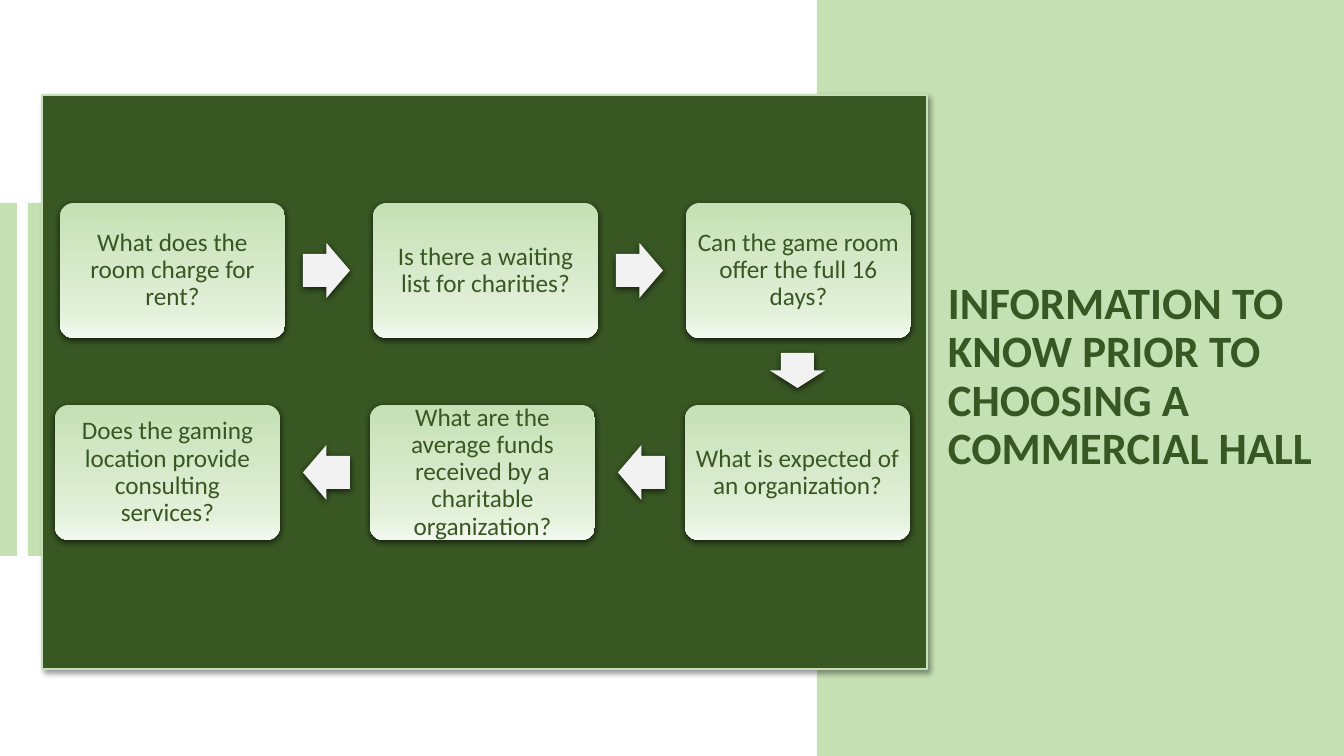
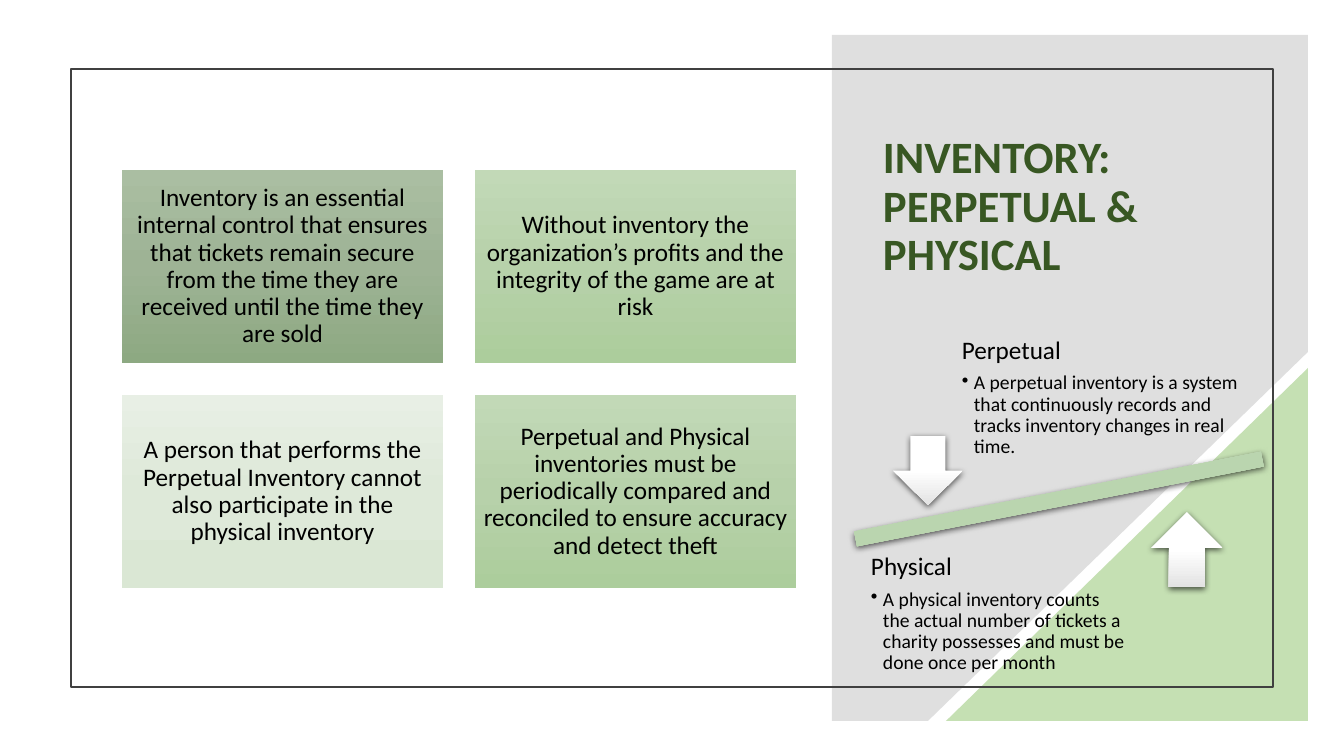
import pptx
import pptx.dml.color
import pptx.enum.shapes
import pptx.enum.text
import pptx.oxml.ns
import pptx.util
from lxml import etree

SHAPE = pptx.enum.shapes.MSO_SHAPE
ALIGN = pptx.enum.text.PP_ALIGN
ANCHOR = pptx.enum.text.MSO_ANCHOR
qn = pptx.oxml.ns.qn

PX = 914400 / 100.8
WIDTH, HEIGHT = 1344, 756

# Shared look
FONT = "Calibri"
DARK, LIGHT, BLACK = "385723", "C5E0B3", "000000"
SOFT_SHADOW = (63, 4.5, 1.5, 90)  # opacity %, blur pt, distance pt, direction
PANEL_SHADOW = (40, 4, 3, 45)
CARD_FILL = [(0, "C5E0B4"), (81, "E2F0D9"), (100, "F3F9F0")]
SAGE = [(0, "AABEA2"), (50, "9EB395"), (100, "8DA982")]
GREEN = [(0, "C2D9B7"), (50, "B7D1AA"), (100, "ACCD9C")]
PALE = [(0, "E8EFE5"), (50, "DEE9D9"), (100, "DAE7D4")]
BEAM = [(0, "C4D9BB"), (50, "BAD5AF"), (100, "A5BF99")]
WHITE = [(0, "FFFFFF"), (50, "FFFFFF"), (100, "E3E3E3")]

# Slide 1: questions in reading order of the arrows
HALL_TITLE = "INFORMATION TO KNOW PRIOR TO CHOOSING A COMMERCIAL HALL"
CARD_W, CARD_H = 225, 135
QUESTION_ROWS = [
    dict(x=60, step=313, y=203, arrow=SHAPE.RIGHT_ARROW, arrow_dx=243, cards=[
        "What does the room charge for rent?",
        "Is there a waiting list for charities?",
        "Can the game room offer the full 16 days?"]),
    dict(x=685, step=-315, y=405, arrow=SHAPE.LEFT_ARROW, arrow_dx=-67, cards=[
        "What is expected of an organization?",
        "What are the average funds received by a charitable organization?",
        "Does the gaming location provide consulting services?"]),
]

# Slide 2: tiles, then the two sides of the seesaw
INVENTORY_TITLE = "INVENTORY: PERPETUAL & PHYSICAL"
TILE_W, TILE_H, TILE_GAP = 321, 193, 32
TILES = [
    ("Inventory is an essential internal control that ensures that tickets "
     "remain secure from the time they are received until the time they are sold", SAGE),
    ("Without inventory the organization’s profits and the integrity of the "
     "game are at risk", GREEN),
    ("A person that performs the Perpetual Inventory cannot also participate "
     "in the physical inventory", PALE),
    ("Perpetual and Physical inventories must be periodically compared and "
     "reconciled to ensure accuracy and detect theft", GREEN),
]
SIDES = [
    ("Perpetual", "A perpetual inventory is a system that continuously records "
     "and tracks inventory changes in real time.",
     (948, 333, 315, 129), SHAPE.DOWN_ARROW, (893, 436, 70, 69)),
    ("Physical", "A physical inventory counts the actual number of tickets a "
     "charity possesses and must be done once per month",
     (857, 539, 283, 150), SHAPE.UP_ARROW, (1151, 512, 72, 75)),
]


def px(n):
    return round(n * PX)


def rgb(value):
    return pptx.dml.color.RGBColor.from_string(value)


def paint(s, fill=None, line=None, line_pt=1, shadow=None, alpha=None):
    """Fill is a hex string, a list of gradient stops, or None."""
    if isinstance(fill, list):
        s.fill.gradient()
        s.fill.gradient_angle = 270
        stops = s.element.spPr.find(".//" + qn("a:gsLst"))
        for old in list(stops):
            stops.remove(old)
        for pos, value in fill:
            gs = etree.SubElement(stops, qn("a:gs"), pos=str(pos * 1000))
            etree.SubElement(gs, qn("a:srgbClr"), val=value)
    elif fill:
        s.fill.solid()
        s.fill.fore_color.rgb = rgb(fill)
        if alpha:
            clr = s.element.spPr.find(".//" + qn("a:srgbClr"))
            etree.SubElement(clr, qn("a:alpha"), val=str(alpha * 1000))
    else:
        s.fill.background()
    if line:
        s.line.color.rgb = rgb(line)
        s.line.width = pptx.util.Pt(line_pt)
    else:
        s.line.fill.background()
    s.shadow.inherit = False
    if shadow:
        opacity, blur, dist, angle = shadow
        effects = s.element.spPr.find(qn("a:effectLst"))
        outer = etree.SubElement(
            effects, qn("a:outerShdw"), blurRad=str(round(blur * 12700)),
            dist=str(round(dist * 12700)), dir=str(angle * 60000),
            algn="ctr", rotWithShape="0")
        clr = etree.SubElement(outer, qn("a:srgbClr"), val=BLACK)
        etree.SubElement(clr, qn("a:alpha"), val=str(opacity * 1000))


def add_shape(slide, kind, box, adj=(), **look):
    s = slide.shapes.add_shape(kind, *map(px, box))
    for i, value in enumerate(adj):
        s.adjustments[i] = value
    paint(s, **look)
    return s


def set_frame(s, inset_x, inset_y):
    tf = s.text_frame
    tf.word_wrap = True
    tf.vertical_anchor = ANCHOR.MIDDLE
    tf.margin_left = tf.margin_right = px(inset_x)
    tf.margin_top = tf.margin_bottom = px(inset_y)
    return tf


def write(p, text, size=18, color=BLACK, bold=False, align=ALIGN.LEFT, after=0, bullet=False):
    p.alignment = align
    p.line_spacing = 0.9
    p.space_after = pptx.util.Pt(after)
    if bullet:
        ppr = p._p.get_or_add_pPr()
        ppr.set("marL", str(px(12)))
        ppr.set("indent", str(-px(12)))
        etree.SubElement(ppr, qn("a:buChar"), char="•")
    r = p.add_run()
    r.text = text
    r.font.name = FONT
    r.font.size = pptx.util.Pt(size)
    r.font.bold = bold
    r.font.color.rgb = rgb(color)


def add_title(slide, text, box):
    tf = set_frame(slide.shapes.add_textbox(*map(px, box)), 10, 5)
    write(tf.paragraphs[0], text, size=32, color=DARK, bold=True)


def add_card(slide, kind, box, text, color=BLACK, **look):
    s = add_shape(slide, kind, box, **look)
    write(set_frame(s, 7, 7).paragraphs[0], text, color=color, align=ALIGN.CENTER)


def build_hall(slide):
    # Side panel, bars and dark board
    for box in [(817, 0, WIDTH - 817, HEIGHT), (28, 203, 17, 353), (0, 203, 17, 353)]:
        add_shape(slide, SHAPE.RECTANGLE, box, fill=LIGHT)
    add_title(slide, HALL_TITLE, (938, 156, 399, 443))
    add_shape(slide, SHAPE.RECTANGLE, (42, 95, 885, 574), fill=DARK,
              line="C5E0B4", shadow=PANEL_SHADOW)

    # Question cards and arrows
    arrow_look = dict(adj=(0.6, 0.5), fill="F2F2F2", shadow=SOFT_SHADOW)
    for row in QUESTION_ROWS:
        for i, text in enumerate(row["cards"]):
            x, y = row["x"] + i * row["step"], row["y"]
            add_card(slide, SHAPE.ROUNDED_RECTANGLE, (x, y, CARD_W, CARD_H), text,
                     color=DARK, adj=(0.1,), fill=CARD_FILL, shadow=SOFT_SHADOW)
            if i < len(row["cards"]) - 1:
                add_shape(slide, row["arrow"], (x + row["arrow_dx"], y + 40, 47, 55),
                          **arrow_look)
    add_shape(slide, SHAPE.DOWN_ARROW, (770, 353, 55, 35), **arrow_look)


def build_inventory(slide):
    # Grey panel, green corner and frame
    fb = slide.shapes.build_freeform(832, 35, scale=PX)
    fb.add_line_segments([(1308, 35), (1308, 352), (928, 721), (832, 721)], close=True)
    paint(fb.convert_to_shape(), fill="808080", alpha=25)
    corner = add_shape(slide, SHAPE.RIGHT_TRIANGLE, (946, 368, 362, 353), fill=LIGHT)
    corner.element.spPr.find(qn("a:xfrm")).set("flipH", "1")
    add_shape(slide, SHAPE.RECTANGLE, (71, 69, 1202, 618), line="404040", line_pt=1.5)
    add_title(slide, INVENTORY_TITLE, (873, 81, 360, 253))

    # Two-by-two tiles
    for i, (text, fill) in enumerate(TILES):
        row, col = divmod(i, 2)
        box = (122 + col * (TILE_W + TILE_GAP), 170 + row * (TILE_H + TILE_GAP),
               TILE_W, TILE_H)
        add_card(slide, SHAPE.RECTANGLE, box, text, fill=fill)

    # Seesaw
    beam = add_shape(slide, SHAPE.MATH_MINUS, (777, 467, 564, 64), fill=BEAM,
                     shadow=SOFT_SHADOW)
    beam.rotation = 348.9
    for heading, detail, text_box, arrow, arrow_box in SIDES:
        add_shape(slide, arrow, arrow_box, fill=WHITE, shadow=SOFT_SHADOW)
        tf = set_frame(slide.shapes.add_textbox(*map(px, text_box)), 14, 14)
        write(tf.paragraphs[0], heading, after=6)
        write(tf.add_paragraph(), detail, size=14, after=2, bullet=True)


def main():
    prs = pptx.Presentation()
    prs.slide_width, prs.slide_height = px(WIDTH), px(HEIGHT)
    for build in (build_hall, build_inventory):
        build(prs.slides.add_slide(prs.slide_layouts[6]))
    prs.save("out.pptx")


if __name__ == "__main__":
    main()
